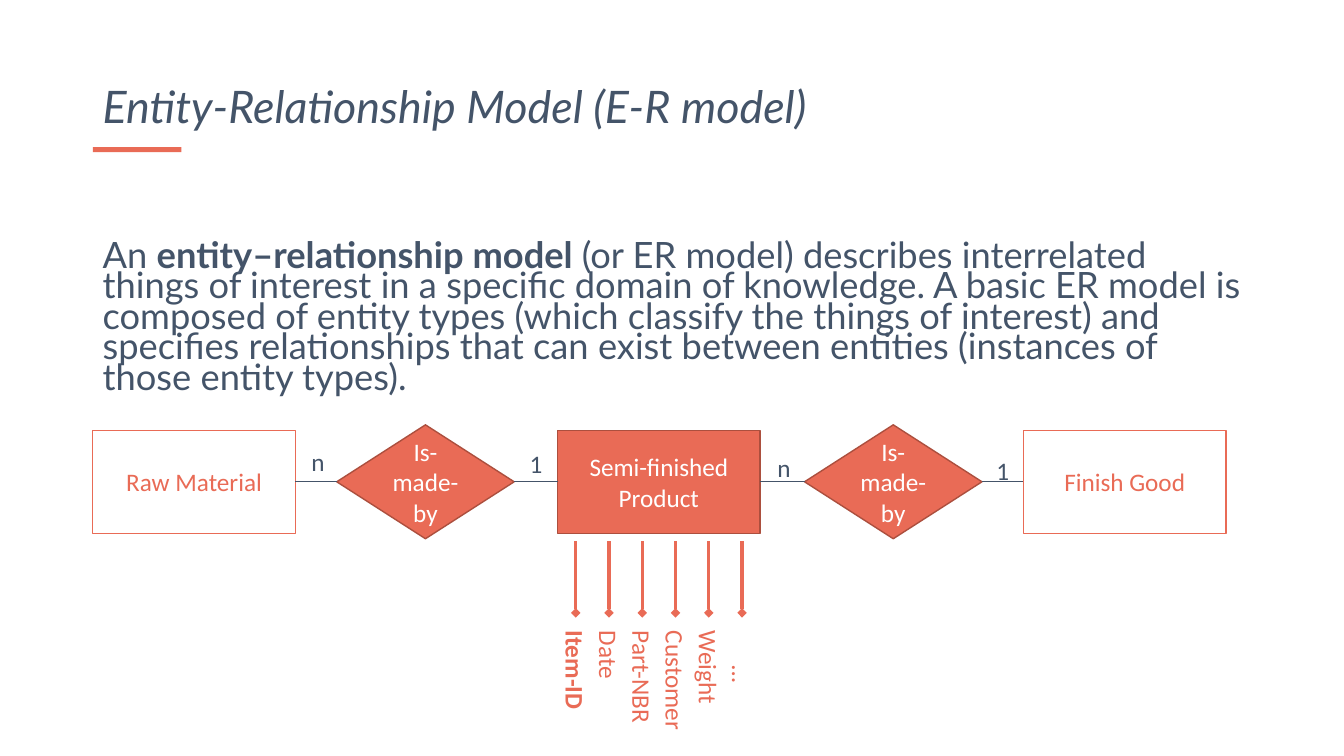
from dataclasses import dataclass

from lxml import etree
from pptx import Presentation
from pptx import util as u
from pptx.dml.color import RGBColor
from pptx.enum import shapes, text
from pptx.oxml.ns import qn


@dataclass(frozen=True)
class Theme:
    coral: RGBColor = RGBColor(0xE9, 0x6B, 0x56)
    rust: RGBColor = RGBColor(0xAC, 0x4F, 0x3E)
    slate: RGBColor = RGBColor(0x44, 0x54, 0x69)
    white: RGBColor = RGBColor(0xFF, 0xFF, 0xFF)
    heading_font: str = "Lato"
    label_font: str = "Calibri"
    title_size: float = 32
    body_size: float = 25.9
    label_size: float = 18


class Page:
    def __init__(self, deck, theme):
        self.theme = theme
        self.shapes = deck.slides.add_slide(deck.slide_layouts[6]).shapes

    def span(self, para, words, font, size, color, bold=False, italic=False):
        span = para.add_run()
        span.text = words
        span.font.name = font
        span.font.size = u.Pt(size)
        span.font.color.rgb = color
        span.font.bold = bold
        span.font.italic = italic

    def text_box(self, left, top, width, height):
        box = self.shapes.add_textbox(*map(u.Inches, (left, top, width, height)))
        box.text_frame.word_wrap = True
        return box

    def heading(self, bounds, spans, size, spacing, anchor, italic=False):
        frame = self.text_box(*bounds).text_frame
        frame.vertical_anchor = anchor
        para = frame.paragraphs[0]
        para.line_spacing = spacing
        para.space_before = u.Pt(10)
        for words, bold in spans:
            self.span(para, words, self.theme.heading_font, size, self.theme.slate, bold, italic)

    def label(self, left, top, width, words, color, bold=False, centred=True, rotation=0):
        box = self.text_box(left, top, width, 0.4)
        box.rotation = rotation
        box.text_frame.auto_size = text.MSO_AUTO_SIZE.SHAPE_TO_FIT_TEXT
        para = box.text_frame.paragraphs[0]
        para.alignment = text.PP_ALIGN.CENTER if centred else text.PP_ALIGN.LEFT
        self.span(para, words, self.theme.label_font, self.theme.label_size, color, bold)

    def block(self, kind, left, top, width, height, fill, line=None):
        block = self.shapes.add_shape(kind, *map(u.Inches, (left, top, width, height)))
        block.shadow.inherit = False
        block.fill.solid()
        block.fill.fore_color.rgb = fill
        if line is None:
            block.line.fill.background()
        else:
            block.line.color.rgb = line
            block.line.width = u.Pt(1)
        return block

    def node(self, kind, left, middle, width, height, words, filled):
        theme = self.theme
        fill, line, ink = (
            (theme.coral, theme.rust, theme.white) if filled
            else (theme.white, theme.coral, theme.coral)
        )
        node = self.block(kind, left, middle - height / 2, width, height, fill, line)
        frame = node.text_frame
        frame.word_wrap = True
        frame.vertical_anchor = text.MSO_ANCHOR.MIDDLE
        if kind == shapes.MSO_SHAPE.FLOWCHART_DECISION:
            frame.margin_left = frame.margin_right = 0
        para = frame.paragraphs[0]
        para.alignment = text.PP_ALIGN.CENTER
        self.span(para, words, theme.label_font, theme.label_size, ink)
        return node

    def line(self, start, end, color, weight, diamond=False):
        line = self.shapes.add_connector(
            shapes.MSO_CONNECTOR.STRAIGHT, *map(u.Inches, (*start, *end)))
        line.line.color.rgb = color
        line.line.width = u.Pt(weight)
        properties = line._element.spPr
        if diamond:
            etree.SubElement(properties.find(qn("a:ln")), qn("a:tailEnd"), type="diamond")
        etree.SubElement(properties, qn("a:effectLst"))
        return line

    def join(self, first, second):
        line = self.line((0, 0), (0, 0), self.theme.slate, 0.5)
        line.begin_connect(first, 3)
        line.end_connect(second, 1)


def main():
    deck = Presentation()
    deck.slide_width = u.Inches(13.33)
    deck.slide_height = u.Inches(7.5)
    theme = Theme()
    page = Page(deck, theme)
    rectangle = shapes.MSO_SHAPE.RECTANGLE
    decision = shapes.MSO_SHAPE.FLOWCHART_DECISION

    page.block(rectangle, 0.92, 1.46, 0.88, 0.05, theme.coral)
    page.heading((0.92, 0.18, 11.5, 1.19), [("Entity-Relationship Model (E-R model)", False)],
                 theme.title_size, 0.9, text.MSO_ANCHOR.BOTTOM, italic=True)
    page.heading((0.92, 2.37, 11.5, 1.7), [
        ("An ", False),
        ("entity–relationship model ", True),
        ("(or ER model) describes interrelated things of interest in a specific domain of "
         "knowledge. A basic ER model is composed of entity types (which classify the things "
         "of interest) and specifies relationships that can exist between entities (instances "
         "of those entity types).", False),
    ], theme.body_size, 0.7, text.MSO_ANCHOR.TOP)

    entity_size, relation_size = (2.01, 1.02), (1.76, 1.13)
    chain = [
        (rectangle, 0.92, entity_size, "Raw Material", False),
        (decision, 3.34, relation_size, "Is-made-by", True),
        (rectangle, 5.53, entity_size, "Semi-finished Product", True),
        (decision, 7.98, relation_size, "Is-made-by", True),
        (rectangle, 10.15, entity_size, "Finish Good", False),
    ]
    nodes = [page.node(kind, left, 4.78, *size, words, filled)
             for kind, left, size, words, filled in chain]
    for first, second in zip(nodes, nodes[1:]):
        page.join(first, second)

    for left, top, width, words in [
        (2.92, 4.38, 0.47, "n"), (5.12, 4.4, 0.39, "1"),
        (7.54, 4.44, 0.47, "n"), (9.75, 4.47, 0.39, "1"),
    ]:
        page.label(left, top, width, words, theme.slate)

    attributes = [("Item-ID", 1.05), ("Date", 1.05), ("Part-NBR", 1.18),
                  ("Customer", 1.34), ("Weight", 1.05), ("…", 1.05)]
    for index, (words, length) in enumerate(attributes):
        center = 5.71 + 0.33 * index
        page.line((center, 5.37), (center, 6.08), theme.coral, 2.25, diamond=True)
        page.label(center - length / 2, 5.96 + length / 2, length, words, theme.coral,
                   bold=words == "Item-ID", centred=words == "…", rotation=90)

    deck.save("out.pptx")


if __name__ == "__main__":
    main()
